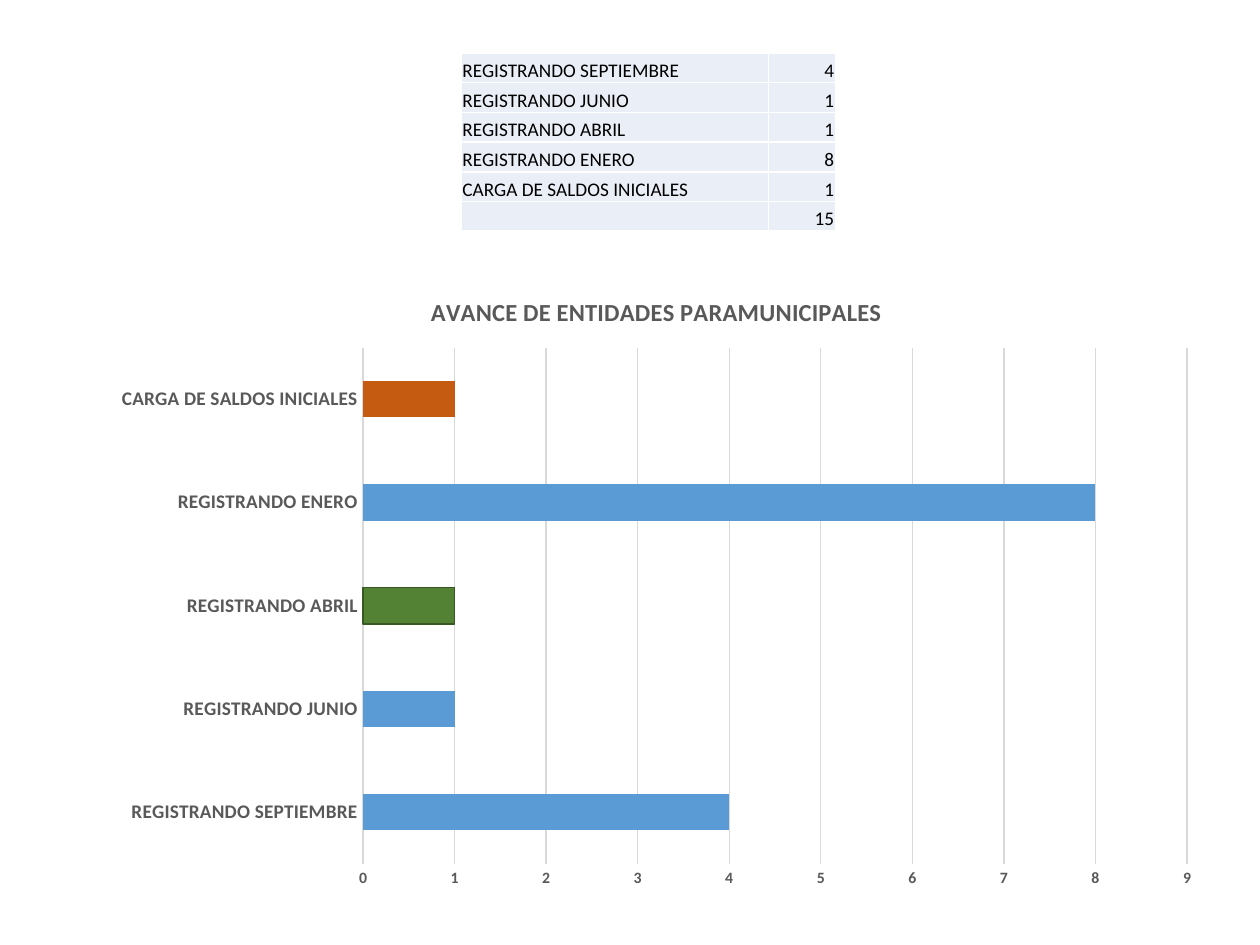
from dataclasses import dataclass

from lxml.etree import SubElement
from pptx import Presentation
from pptx.chart.data import CategoryChartData
from pptx.dml.color import RGBColor
from pptx.enum.chart import XL_CHART_TYPE as ChartType, XL_TICK_MARK as TickMark
from pptx.enum.text import MSO_ANCHOR as Anchor, PP_ALIGN as Align
from pptx.oxml.ns import qn
from pptx.util import Inches, Pt

TITLE = "AVANCE DE ENTIDADES PARAMUNICIPALES"
PROGRESS = [
    ("REGISTRANDO SEPTIEMBRE", 4),
    ("REGISTRANDO JUNIO", 1),
    ("REGISTRANDO ABRIL", 1),
    ("REGISTRANDO ENERO", 8),
    ("CARGA DE SALDOS INICIALES", 1),
]


@dataclass(frozen=True)
class Theme:
    font: str = "Calibri"
    title_size: int = 14
    label_size: int = 11
    scale_size: int = 9
    text: str = "000000"
    chart_text: str = "595959"
    grid: str = "D9D9D9"
    cell: str = "EAEFF7"
    border: str = "FFFFFF"
    bar: str = "5B9BD5"
    april: str = "548235"
    april_line: str = "385723"
    opening: str = "C55A11"


THEME = Theme()
# category: (fill, outline)
HIGHLIGHTS = {
    "REGISTRANDO ABRIL": (THEME.april, THEME.april_line),
    "CARGA DE SALDOS INICIALES": (THEME.opening, None),
}
COLUMN_WIDTHS = (2.44, 0.53)
ROW_HEIGHT = 0.236


def rgb(value):
    return RGBColor.from_string(value)


def paint(fill, color):
    fill.solid()
    fill.fore_color.rgb = rgb(color)


def style_line(line, color, width=0.75):
    line.color.rgb = rgb(color)
    line.width = Pt(width)


def style_font(font, size, color, bold=False):
    font.name = THEME.font
    font.size = Pt(size)
    font.bold = bold
    font.color.rgb = rgb(color)


def add_borders(cell):
    properties = cell._tc.get_or_add_tcPr()
    for side in ("lnL", "lnR", "lnT", "lnB"):
        line = SubElement(properties, qn(f"a:{side}"), w=str(Pt(1)))
        fill = SubElement(line, qn("a:solidFill"))
        SubElement(fill, qn("a:srgbClr"), val=THEME.border)


def add_progress_table(slide):
    rows = PROGRESS + [("", sum(count for _, count in PROGRESS))]
    table = slide.shapes.add_table(
        len(rows), len(COLUMN_WIDTHS), Inches(3.66), Inches(0.42),
        Inches(sum(COLUMN_WIDTHS)), Inches(ROW_HEIGHT * len(rows))).table
    table.first_row = table.horz_banding = False
    for column, width in zip(table.columns, COLUMN_WIDTHS):
        column.width = Inches(width)
    for r, values in enumerate(rows):
        table.rows[r].height = Inches(ROW_HEIGHT)
        for c, value in enumerate(values):
            cell = table.cell(r, c)
            add_borders(cell)
            paint(cell.fill, THEME.cell)
            cell.vertical_anchor = Anchor.BOTTOM
            cell.margin_left = cell.margin_right = cell.margin_top = Inches(0.01)
            cell.margin_bottom = 0
            cell.text = str(value)
            paragraph = cell.text_frame.paragraphs[0]
            paragraph.alignment = Align.RIGHT if c else Align.LEFT
            style_font(paragraph.font, THEME.label_size, THEME.text)


def add_progress_chart(slide):
    data = CategoryChartData()
    data.categories = [status for status, _ in PROGRESS]
    data.add_series("Series 1", [count for _, count in PROGRESS])
    chart = slide.shapes.add_chart(
        ChartType.BAR_CLUSTERED, Inches(0.79), Inches(2.15),
        Inches(8.84), Inches(4.99), data).chart
    chart.has_legend = False
    style_font(chart.font, 10, THEME.text, bold=True)

    chart.has_title = True
    chart.chart_title.include_in_layout = False
    title_frame = chart.chart_title.text_frame
    title_frame.text = TITLE
    style_font(title_frame.paragraphs[0].font, THEME.title_size, THEME.chart_text, bold=True)

    categories, scale = chart.category_axis, chart.value_axis
    for axis, size in ((categories, THEME.label_size), (scale, THEME.scale_size)):
        axis.major_tick_mark = axis.minor_tick_mark = TickMark.NONE
        style_font(axis.tick_labels.font, size, THEME.chart_text, bold=True)
    style_line(categories.format.line, THEME.grid)
    scale.format.line.fill.background()
    scale.minimum_scale, scale.maximum_scale, scale.major_unit = 0, 9, 1
    scale.has_major_gridlines = True
    style_line(scale.major_gridlines.format.line, THEME.grid)

    plot = chart.plots[0]
    plot.gap_width = 182
    plot.vary_by_categories = False
    series = plot.series[0]
    paint(series.format.fill, THEME.bar)
    for index, (status, _) in enumerate(PROGRESS):
        if status in HIGHLIGHTS:
            fill, outline = HIGHLIGHTS[status]
            point = series.points[index].format
            paint(point.fill, fill)
            if outline:
                style_line(point.line, outline)


def main():
    presentation = Presentation()
    presentation.slide_width, presentation.slide_height = Inches(10), Inches(7.5)
    slide = presentation.slides.add_slide(presentation.slide_layouts[6])
    add_progress_chart(slide)
    add_progress_table(slide)
    presentation.save("out.pptx")


if __name__ == "__main__":
    main()
